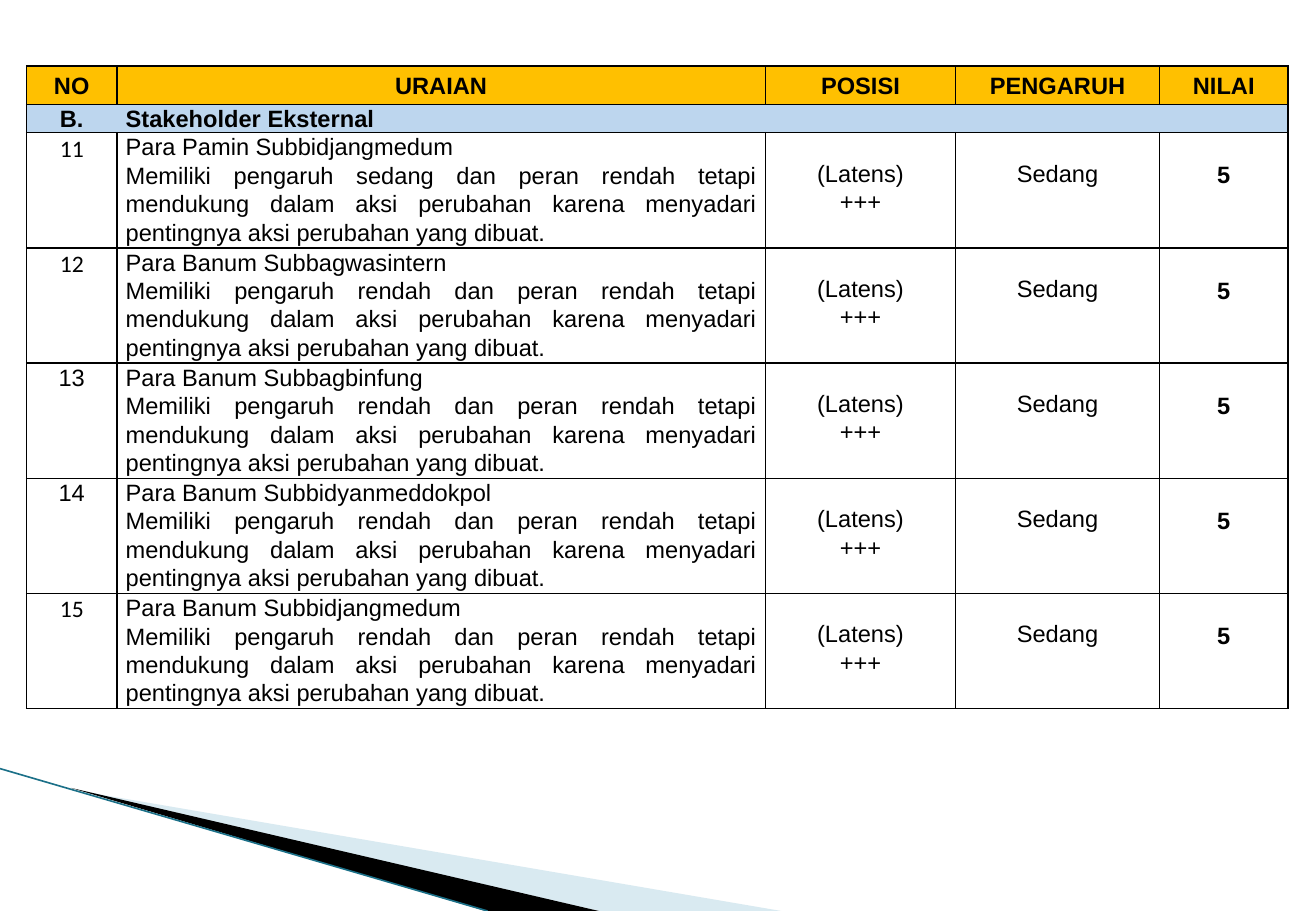
from dataclasses import dataclass

from lxml import etree
from pptx import Presentation
from pptx import util as u
from pptx.dml.color import RGBColor
from pptx.enum import shapes, text
from pptx.oxml import ns

BLACK = RGBColor(0x00, 0x00, 0x00)
GOLD = RGBColor(0xFF, 0xC0, 0x00)
SKY = RGBColor(0xBD, 0xD6, 0xEE)
PALE_BLUE = RGBColor(0xA0, 0xCB, 0xDC)
TEAL = RGBColor(0x1B, 0x70, 0x88)

HEADINGS = ["NO", "URAIAN", "POSISI", "PENGARUH", "NILAI"]
COLUMN_WIDTHS = [53.5, 384.4, 112.8, 120.8, 76.3]
HEADER_HEIGHT, GROUP_HEIGHT, BODY_HEIGHT = 22.8, 16.6, 68.3
ALL_SIDES = "LRTB"


@dataclass
class Stakeholder:
    number: str
    name: str
    influence: str = "rendah"
    number_font: str = "Calibri"

    def description(self) -> str:
        return (f"Memiliki pengaruh {self.influence} dan peran rendah tetapi "
                "mendukung dalam aksi perubahan karena menyadari "
                "pentingnya aksi perubahan yang dibuat.")


@dataclass
class CellStyle:
    align: text.PP_ALIGN = text.PP_ALIGN.CENTER
    bold: bool = False
    font: str = "Arial"
    anchor: text.MSO_ANCHOR = text.MSO_ANCHOR.TOP
    top: float = 0
    fill: RGBColor | None = None
    sides: str = ALL_SIDES


@dataclass
class Wedge:
    points: list[tuple[float, float]]
    color: RGBColor
    opacity: int = 100


STAKEHOLDERS = [
    Stakeholder("11", "Para Pamin Subbidjangmedum", influence="sedang"),
    Stakeholder("12", "Para Banum Subbagwasintern"),
    Stakeholder("13", "Para Banum Subbagbinfung", number_font="Arial"),
    Stakeholder("14", "Para Banum Subbidyanmeddokpol", number_font="Arial"),
    Stakeholder("15", "Para Banum Subbidjangmedum"),
]
WEDGES = [
    Wedge([(42.5, 468), (463, 540), (355, 540)], PALE_BLUE, opacity=40),
    Wedge([(41.8, 467.3), (355, 540), (288, 540)], BLACK),
]


def add_wedge(slide, wedge: Wedge) -> None:
    start, *others = wedge.points
    builder = slide.shapes.build_freeform(*start, scale=u.Pt(1))
    builder.add_line_segments(others)
    sp = builder.convert_to_shape()
    sp.shadow.inherit = False
    sp.fill.solid()
    sp.fill.fore_color.rgb = wedge.color
    sp.line.fill.background()
    if wedge.opacity < 100:
        color = sp.fill._xPr.find(".//" + ns.qn("a:srgbClr"))
        etree.SubElement(color, ns.qn("a:alpha"), val=str(wedge.opacity * 1000))


def add_edge_line(slide) -> None:
    line = slide.shapes.add_connector(
        shapes.MSO_CONNECTOR.STRAIGHT, u.Pt(0), u.Pt(455.6), u.Pt(289), u.Pt(540))
    line.line.color.rgb = TEAL
    line.line.width = u.Pt(0.95)
    etree.SubElement(line._element.spPr, ns.qn("a:effectLst"))


def set_borders(cell, sides: str) -> None:
    """Draw the named sides in black and clear the others."""
    tc_pr = cell._tc.get_or_add_tcPr()
    for side in ALL_SIDES:
        ln = etree.SubElement(tc_pr, ns.qn(f"a:ln{side}"), w=str(u.Pt(1)))
        if side in sides:
            fill = etree.SubElement(ln, ns.qn("a:solidFill"))
            etree.SubElement(fill, ns.qn("a:srgbClr"), val=str(BLACK))
        else:
            etree.SubElement(ln, ns.qn("a:noFill"))


def style_cell(cell, content: str, style: CellStyle) -> None:
    set_borders(cell, style.sides)
    if style.fill is None:
        cell.fill.background()
    else:
        cell.fill.solid()
        cell.fill.fore_color.rgb = style.fill
    cell.margin_left = cell.margin_right = u.Pt(5.2)
    cell.margin_top, cell.margin_bottom = u.Pt(style.top), u.Pt(0)
    cell.vertical_anchor = style.anchor
    cell.text_frame.text = content
    for p in cell.text_frame.paragraphs:
        p.alignment = style.align
        p.line_spacing = 1.07
        for r in p.runs:
            r.font.name = style.font
            r.font.size = u.Pt(14)
            r.font.bold = style.bold
            r.font.color.rgb = BLACK


def add_stakeholder_table(slide) -> None:
    heights = [HEADER_HEIGHT, GROUP_HEIGHT] + [BODY_HEIGHT] * len(STAKEHOLDERS)
    frame = slide.shapes.add_table(
        len(heights), len(HEADINGS), u.Pt(15.8), u.Pt(39),
        u.Pt(sum(COLUMN_WIDTHS)), u.Pt(sum(heights)))
    table = frame.table
    table.first_row = table.horz_banding = False
    for column, width in zip(table.columns, COLUMN_WIDTHS):
        column.width = u.Pt(width)
    for row, height in zip(table.rows, heights):
        row.height = u.Pt(height)

    middle = text.MSO_ANCHOR.MIDDLE
    heading = CellStyle(bold=True, anchor=middle, fill=GOLD)
    for col, title in enumerate(HEADINGS):
        style_cell(table.cell(0, col), title, heading)

    table.cell(1, 1).merge(table.cell(1, len(HEADINGS) - 1))
    style_cell(table.cell(1, 0), "B.",
               CellStyle(bold=True, anchor=middle, fill=SKY, sides="LTB"))
    for col in range(1, len(HEADINGS)):
        style_cell(table.cell(1, col), "Stakeholder Eksternal" if col == 1 else "",
                   CellStyle(text.PP_ALIGN.LEFT, bold=True, anchor=middle,
                             fill=SKY, sides="RTB"))

    rating = CellStyle(top=15.5)
    for row, person in enumerate(STAKEHOLDERS, start=2):
        entries = [
            (person.number, CellStyle(font=person.number_font)),
            (f"{person.name}\n{person.description()}",
             CellStyle(text.PP_ALIGN.JUSTIFY)),
            ("(Latens)\n+++", rating),
            ("Sedang", rating),
            ("5", CellStyle(bold=True, top=16.6)),
        ]
        for col, (content, style) in enumerate(entries):
            style_cell(table.cell(row, col), content, style)


def main() -> None:
    prs = Presentation()
    prs.slide_width, prs.slide_height = u.Pt(780), u.Pt(540)
    slide = prs.slides.add_slide(prs.slide_layouts[6])
    for wedge in WEDGES:
        add_wedge(slide, wedge)
    add_edge_line(slide)
    add_stakeholder_table(slide)
    prs.save("out.pptx")


if __name__ == "__main__":
    main()
